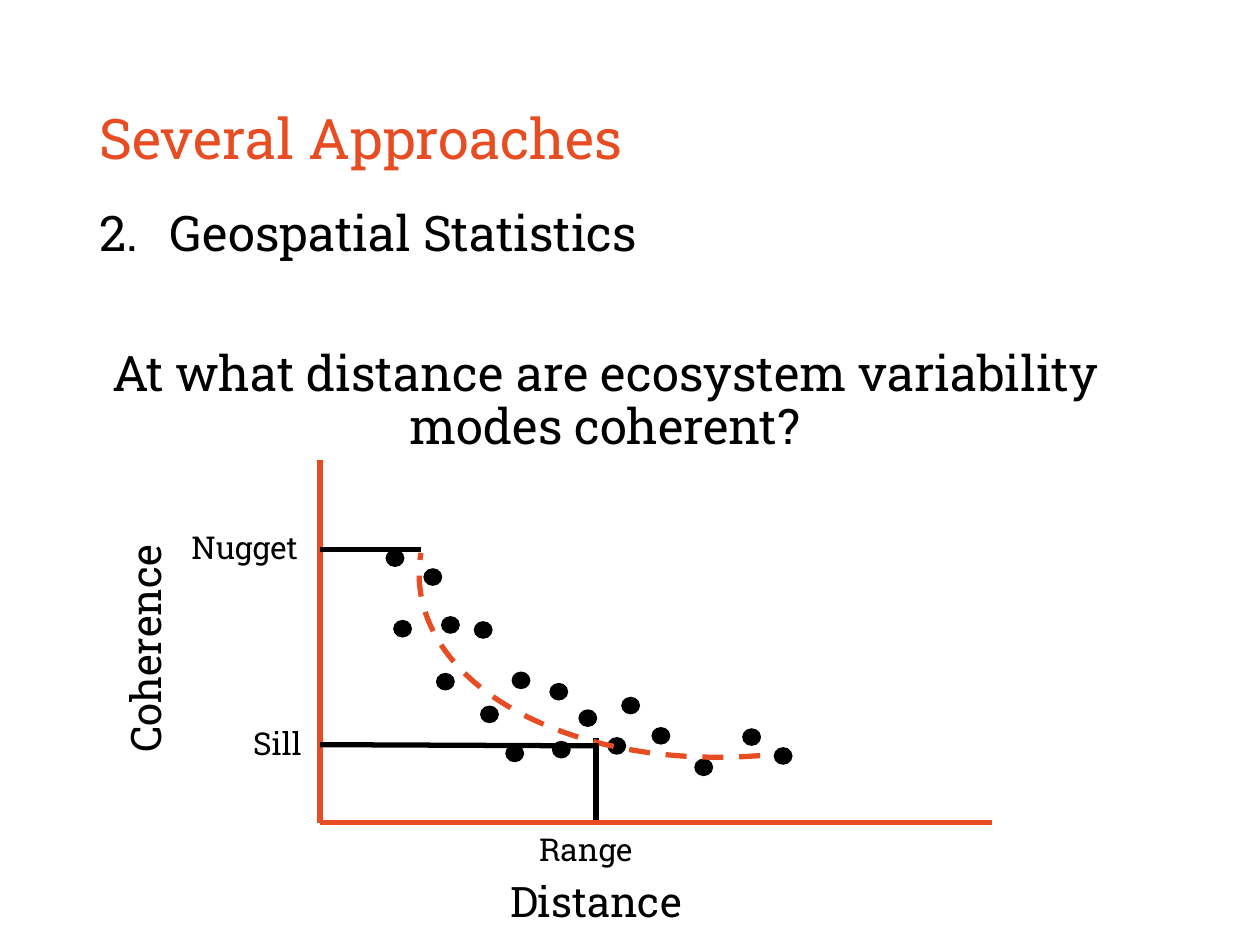
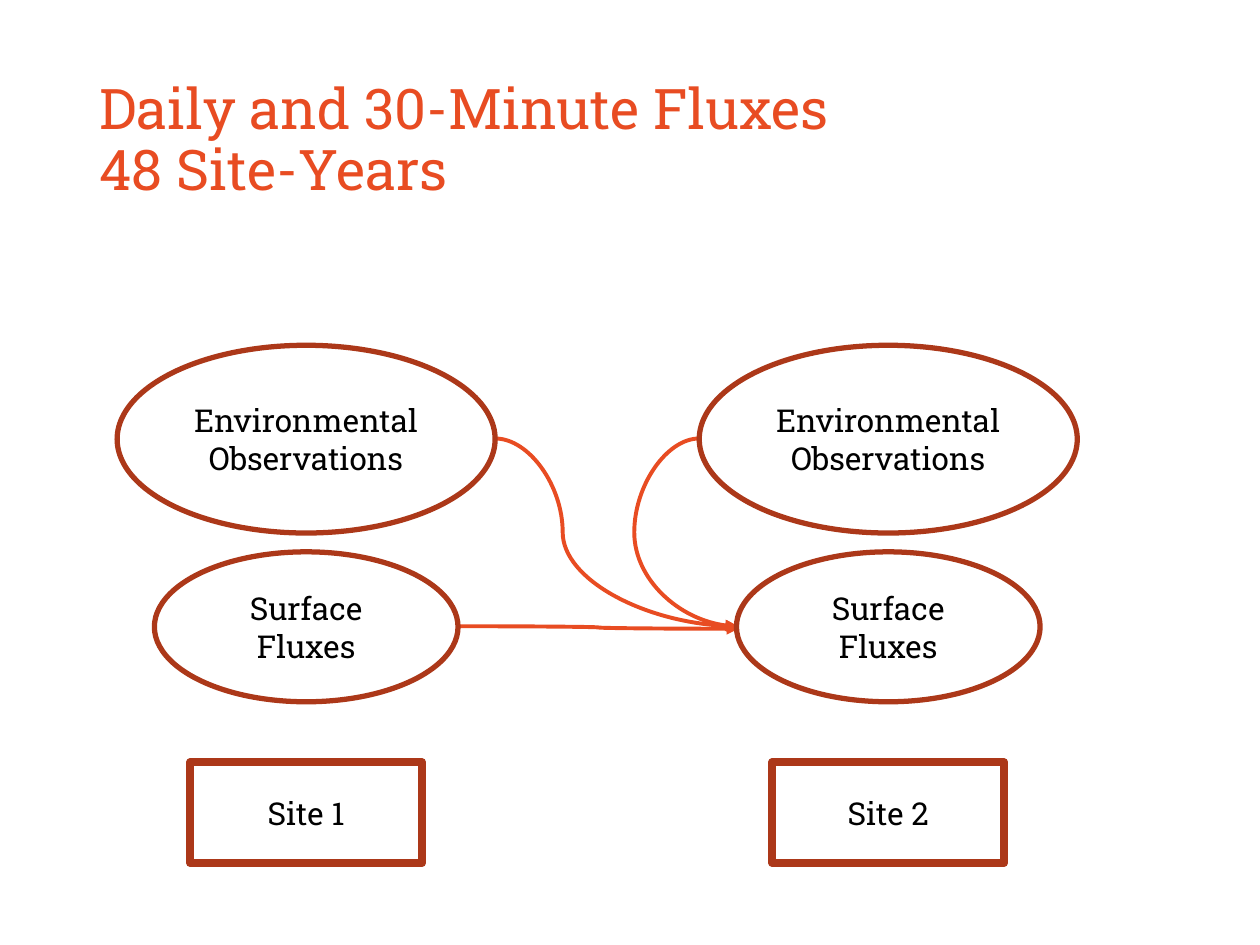
from lxml import etree
from pptx import Presentation
from pptx.dml.color import RGBColor
from pptx.enum import dml, shapes, text
from pptx.oxml.ns import qn
from pptx.util import Inches, Pt

COLORS = {"accent": "E84C22", "outline": "AC3819", "ink": "000000"}
FONT = "Roboto Slab"


def add_text(slide, box, words, size, color="ink", spacing=None, anchor=text.MSO_ANCHOR.TOP):
    """Add a wrapping text box with one paragraph per entry of words."""
    shape = slide.shapes.add_textbox(*map(Inches, box))
    frame = shape.text_frame
    frame.word_wrap = True
    frame.vertical_anchor = anchor
    frame.text = words
    for paragraph in frame.paragraphs:
        paragraph.line_spacing = spacing
        for run in paragraph.runs:
            run.font.name = FONT
            run.font.size = Pt(size)
            run.font.color.rgb = RGBColor.from_string(COLORS[color])
    return shape


def add_line(slide, kind, start, end, color, width):
    line = slide.shapes.add_connector(kind, *map(Inches, start + end))
    line.line.color.rgb = RGBColor.from_string(COLORS[color])
    line.line.width = Pt(width)
    etree.SubElement(line._element.spPr, qn("a:effectLst"))
    return line


presentation = Presentation()
presentation.slide_width = Inches(10)
presentation.slide_height = Inches(7.5)

slides = []
for title in ("Several Approaches", "Daily and 30-Minute Fluxes\v48 Site-Years"):
    slide = presentation.slides.add_slide(presentation.slide_layouts[6])
    add_text(slide, (0.69, 0.4, 8.62, 1.45), title, 32, "accent", 0.9, text.MSO_ANCHOR.MIDDLE)
    slides.append(slide)
statistics_slide, fluxes_slide = slides

# Slide 1: numbered heading and question
body = add_text(
    statistics_slide, (0.69, 1.61, 8.22, 4.76),
    "Geospatial Statistics\nAt what distance are ecosystem variability modes coherent?",
    28, spacing=0.9)
heading, question = body.text_frame.paragraphs
properties = heading._p.get_or_add_pPr()
properties.set("marL", str(Inches(0.56)))
properties.set("indent", str(-Inches(0.56)))
numbering = etree.SubElement(properties, qn("a:buAutoNum"))
numbering.set("type", "arabicPeriod")
numbering.set("startAt", "2")
question.alignment = text.PP_ALIGN.CENTER
question.space_before = Pt(50)

# Slide 1: coherence against distance
STRAIGHT = shapes.MSO_CONNECTOR.STRAIGHT
origin = (2.54, 6.53)
add_line(statistics_slide, STRAIGHT, (4.73, 5.86), (4.73, 6.53), "ink", 3)
add_line(statistics_slide, STRAIGHT, (2.54, 3.65), origin, "accent", 3)
add_line(statistics_slide, STRAIGHT, (7.87, 6.53), origin, "accent", 3)

observations = [
    (4.36, 5.42), (4.59, 5.63), (4.82, 5.85), (4.01, 5.91), (4.93, 5.53), (4.38, 5.88),
    (4.06, 5.33), (5.17, 5.77), (3.06, 4.36), (5.89, 5.78), (5.51, 6.02), (3.5, 4.89),
    (3.76, 4.93), (3.46, 5.34), (3.36, 4.51), (3.81, 5.6), (6.14, 5.93), (3.12, 4.92),
]
for left, top in observations:
    dot = statistics_slide.shapes.add_shape(
        shapes.MSO_SHAPE.OVAL, *map(Inches, (left, top, 0.15, 0.14)))
    dot.shadow.inherit = False
    dot.fill.solid()
    dot.fill.fore_color.rgb = RGBColor.from_string(COLORS["ink"])
    dot.line.fill.background()

fitted_curve = statistics_slide.shapes.add_shape(
    shapes.MSO_SHAPE.ARC, *map(Inches, (3.32, 2.83, 5.21, 3.17)))
fitted_curve.shadow.inherit = False
fitted_curve.rotation = 175.1
fitted_curve.adjustments[0] = 162.61
fitted_curve.adjustments[1] = 3.29
fitted_curve.fill.background()
fitted_curve.line.color.rgb = RGBColor.from_string(COLORS["accent"])
fitted_curve.line.width = Pt(3)
fitted_curve.line.dash_style = dml.MSO_LINE.DASH

add_line(statistics_slide, STRAIGHT, (3.34, 4.36), (2.54, 4.36), "ink", 3)
add_line(statistics_slide, STRAIGHT, (4.75, 5.92), (2.54, 5.91), "ink", 3)

add_text(statistics_slide, (3.95, 6.9, 1.79, 0.5), "Distance", 24)
coherence = add_text(statistics_slide, (0.01, 4.68, 2.28, 0.5), "Coherence", 24)
coherence.rotation = 270
for label, left, top in (("Range", 4.18, 6.54), ("Sill", 1.91, 5.7), ("Nugget", 1.42, 4.14)):
    add_text(statistics_slide, (left, top, 1.79, 0.52), label, 18)

# Slide 2: arrows into the surface fluxes of site 2, with the bend of each curve
arrows = [
    ((3.93, 3.48), (5.86, 4.97), 0.278),
    ((3.64, 4.97), (5.86, 4.99), 0.5),
    ((5.55, 3.48), (5.85, 4.97), -1.72),
]
for start, end, bend in arrows:
    arrow = add_line(fluxes_slide, shapes.MSO_CONNECTOR.CURVE, start, end, "accent", 2.25)
    etree.SubElement(arrow.line._get_or_add_ln(), qn("a:tailEnd")).set("type", "triangle")
    geometry = arrow._element.spPr.find(qn("a:prstGeom"))
    guide = etree.SubElement(geometry.find(qn("a:avLst")), qn("a:gd"))
    guide.set("name", "adj1")
    guide.set("fmla", f"val {round(bend * 100000)}")

# Slide 2: the same three nodes for each site
OVAL, RECTANGLE = shapes.MSO_SHAPE.OVAL, shapes.MSO_SHAPE.RECTANGLE
site_center, site_gap = 2.43, 4.62
for site in range(2):
    center = site_center + site * site_gap
    nodes = [
        (OVAL, "Environmental Observations", 2.74, 3, 1.49, 3),
        (OVAL, "Surface Fluxes", 4.38, 2.41, 1.19, 3),
        (RECTANGLE, f"Site {site + 1}", 6.05, 1.84, 0.8, 4.5),
    ]
    for kind, label, top, width, height, line_width in nodes:
        node = fluxes_slide.shapes.add_shape(
            kind, *map(Inches, (center - width / 2, top, width, height)))
        node.shadow.inherit = False
        node.fill.background()
        node.line.color.rgb = RGBColor.from_string(COLORS["outline"])
        node.line.width = Pt(line_width)
        node.text_frame.text = label
        node.text_frame.vertical_anchor = text.MSO_ANCHOR.MIDDLE
        paragraph = node.text_frame.paragraphs[0]
        paragraph.alignment = text.PP_ALIGN.CENTER
        font = paragraph.runs[0].font
        font.name = FONT
        font.size = Pt(18)
        font.color.rgb = RGBColor.from_string(COLORS["ink"])

presentation.save("out.pptx")
